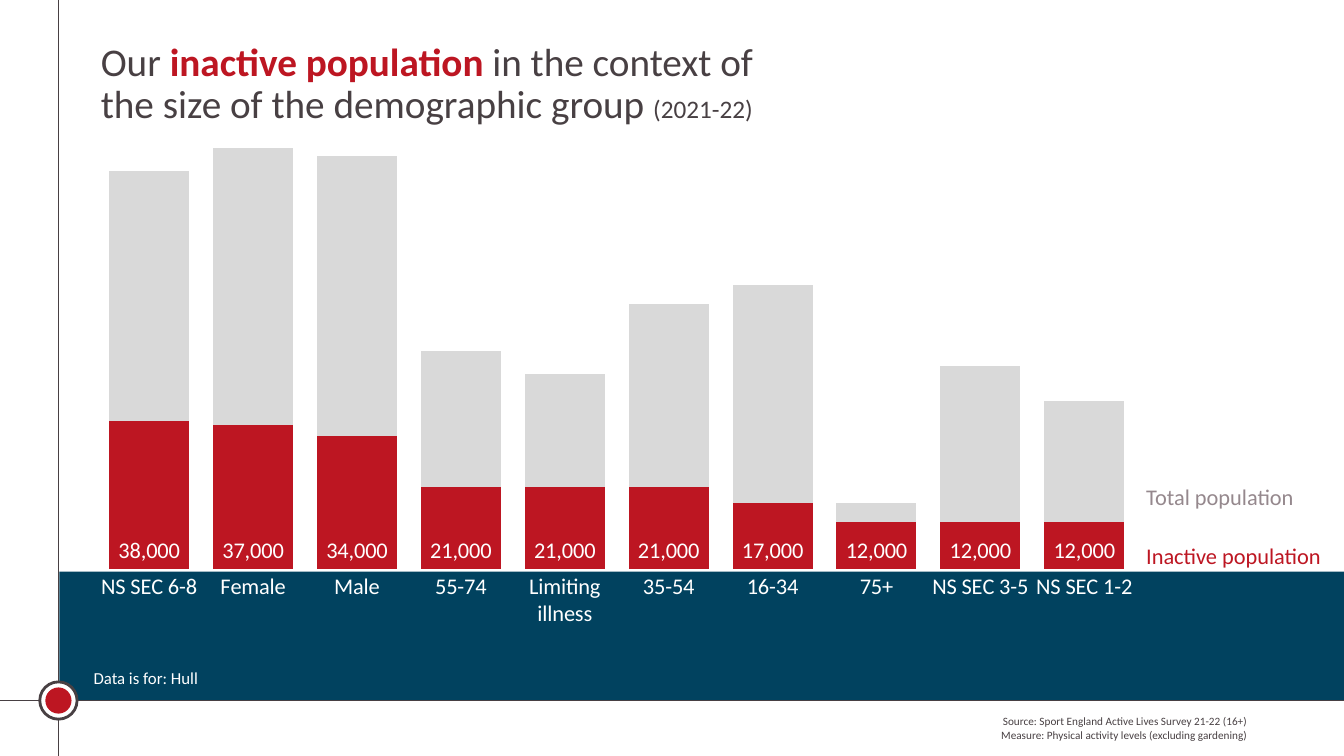
from dataclasses import dataclass

from lxml import etree
from pptx import Presentation
from pptx.chart.data import CategoryChartData
from pptx.dml.color import RGBColor
from pptx.enum.chart import XL_CHART_TYPE, XL_LABEL_POSITION, XL_TICK_MARK
from pptx.enum.shapes import MSO_CONNECTOR, MSO_SHAPE
from pptx.enum.text import MSO_ANCHOR, MSO_AUTO_SIZE, PP_ALIGN
from pptx.oxml.ns import qn
from pptx.util import Inches, Pt

RECT, OVAL = MSO_SHAPE.RECTANGLE, MSO_SHAPE.OVAL
LEFT, RIGHT = PP_ALIGN.LEFT, PP_ALIGN.RIGHT
STACKED = XL_CHART_TYPE.COLUMN_STACKED
INSIDE_BASE = XL_LABEL_POSITION.INSIDE_BASE
NO_TICK = XL_TICK_MARK.NONE
STRAIGHT = MSO_CONNECTOR.STRAIGHT


@dataclass(frozen=True)
class Theme:
    font: str = "Calibri"
    ink: str = "484043"
    red: str = "BD1622"
    navy: str = "01425F"
    grey: str = "D9D9D9"
    label_grey: str = "95888D"
    white: str = "FFFFFF"
    title: int = 28
    period: int = 18
    label: int = 16
    note: int = 12
    source: int = 8


THEME = Theme()
WIDTH, HEIGHT = 13.33, 7.5
AXIS_X, AXIS_Y = 0.58, 6.95  # crossing of the two frame lines

# Group, inactive population, rest of the group
GROUPS = [
    ("NS SEC 6-8", 38000, 64000),
    ("Female", 37000, 71000),
    ("Male", 34000, 72000),
    ("55-74", 21000, 35000),
    ("Limiting illness", 21000, 29000),
    ("35-54", 21000, 47000),
    ("16-34", 17000, 56000),
    ("75+", 12000, 5000),
    ("NS SEC 3-5", 12000, 40000),
    ("NS SEC 1-2", 12000, 31000),
]


def rgb(color):
    return RGBColor.from_string(color)


def style_font(font, size, color):
    font.name = THEME.font
    font.size = Pt(size)
    font.color.rgb = rgb(color)


def add_panel(s, kind, x, y, w, h, fill, line=None):
    sp = s.shapes.add_shape(kind, Inches(x), Inches(y), Inches(w), Inches(h))
    sp.shadow.inherit = False
    sp.fill.solid()
    sp.fill.fore_color.rgb = rgb(fill)
    if line:
        sp.line.color.rgb = rgb(line)
        sp.line.width = Pt(2)
    else:
        sp.line.fill.background()


def add_dot(s, diameter, fill, line=None):
    r = diameter / 2
    add_panel(s, OVAL, AXIS_X - r, AXIS_Y - r, diameter, diameter, fill, line)


def add_rule(s, x1, y1, x2, y2):
    cx = s.shapes.add_connector(STRAIGHT, Inches(x1), Inches(y1), Inches(x2), Inches(y2))
    cx.line.color.rgb = rgb(THEME.ink)
    cx.line.width = Pt(0.5)
    etree.SubElement(cx._element.spPr, qn("a:effectLst"))


def add_label(s, x, y, w, h, lines, size, color, align=LEFT):
    tf = s.shapes.add_textbox(Inches(x), Inches(y), Inches(w), Inches(h)).text_frame
    tf.word_wrap = True
    tf.text = "\n".join(lines)
    for p in tf.paragraphs:
        p.alignment = align
        style_font(p.font, size, color)


def add_title(s):
    sp = s.shapes.title
    sp.left, sp.top, sp.width, sp.height = (Inches(v) for v in (0.9, 0.37, 7.15, 2.1))
    tf = sp.text_frame
    tf.word_wrap = True
    tf.auto_size = MSO_AUTO_SIZE.NONE
    tf.vertical_anchor = MSO_ANCHOR.TOP
    p = tf.paragraphs[0]
    p.alignment = LEFT
    p.line_spacing = 0.9
    p.space_before = Pt(0)
    for text, size, color, bold in [
        ("Our ", THEME.title, THEME.ink, False),
        ("inactive population ", THEME.title, THEME.red, True),
        ("in the context of the size of the demographic group ", THEME.title, THEME.ink, False),
        ("(2021-22)", THEME.period, THEME.ink, False),
    ]:
        r = p.add_run()
        r.text = text
        style_font(r.font, size, color)
        r.font.bold = bold


def set_plot_area(chart, x, y, w, h):
    """Fix the inner plot area, as fractions of the chart."""
    area = chart._chartSpace.chart.plotArea
    for old in area.findall(qn("c:layout")):
        area.remove(old)
    layout = etree.Element(qn("c:layout"))
    manual = etree.SubElement(layout, qn("c:manualLayout"))
    for tag, value in [("layoutTarget", "inner"), ("xMode", "edge"), ("yMode", "edge"),
                       ("x", x), ("y", y), ("w", w), ("h", h)]:
        etree.SubElement(manual, qn(f"c:{tag}")).set("val", str(value))
    area.insert(0, layout)


def add_population_chart(s):
    names, inactive, rest = zip(*GROUPS)
    data = CategoryChartData(number_format="#,##0")
    data.categories = names
    data.add_series("Series 1", inactive)
    data.add_series("Series 2", rest)
    chart = s.shapes.add_chart(STACKED, Inches(0.58), Inches(0.83),
                               Inches(10.69), Inches(5.86), data).chart
    chart.has_legend = chart.has_title = False
    style_font(chart.font, THEME.label, THEME.white)
    set_plot_area(chart, 0.036, 0.03, 0.964, 0.792)

    # Axes
    groups, values = chart.category_axis, chart.value_axis
    groups.major_tick_mark = groups.minor_tick_mark = NO_TICK
    groups.format.line.fill.background()
    style_font(groups.tick_labels.font, THEME.label, THEME.white)
    values.minimum_scale, values.maximum_scale = 0, 120000
    values.has_major_gridlines = False
    values.visible = False

    # Bars
    plot = chart.plots[0]
    plot.gap_width, plot.overlap = 30, 100
    plot.vary_by_categories = False
    for series, color in zip(plot.series, (THEME.red, THEME.grey)):
        series.format.fill.solid()
        series.format.fill.fore_color.rgb = rgb(color)
    labels = plot.series[0].data_labels
    labels.show_value = True
    labels.position = INSIDE_BASE
    labels.number_format = "#,##0"
    labels.number_format_is_linked = False
    style_font(labels.font, THEME.label, THEME.white)


def main():
    prs = Presentation()
    prs.slide_width, prs.slide_height = Inches(WIDTH), Inches(HEIGHT)
    s = prs.slides.add_slide(prs.slide_layouts[5])

    # Band and frame
    add_panel(s, RECT, 0.59, 5.67, WIDTH - 0.59, 1.28, THEME.navy)
    add_rule(s, AXIS_X, 0, AXIS_X, HEIGHT)
    add_rule(s, 0, AXIS_Y, WIDTH, AXIS_Y)
    add_dot(s, 0.37, THEME.white, THEME.ink)
    add_dot(s, 0.26, THEME.red)

    # Title and chart
    add_title(s)
    add_population_chart(s)

    # Series names
    add_label(s, 11.27, 5.33, 1.94, 0.37, ["Inactive population"], THEME.label, THEME.red)
    add_label(s, 11.27, 4.74, 1.71, 0.37, ["Total population"], THEME.label, THEME.label_grey)

    # Notes on the data
    add_label(s, 0.83, 6.58, 3.63, 0.3, ["Data is for: Hull"], THEME.note, THEME.white)
    add_label(s, 6, 7.04, 6.47, 0.37,
              ["Source: Sport England Active Lives Survey 21-22 (16+)",
               "Measure: Physical activity levels (excluding gardening)"],
              THEME.source, THEME.ink, RIGHT)

    prs.save("out.pptx")


if __name__ == "__main__":
    main()
